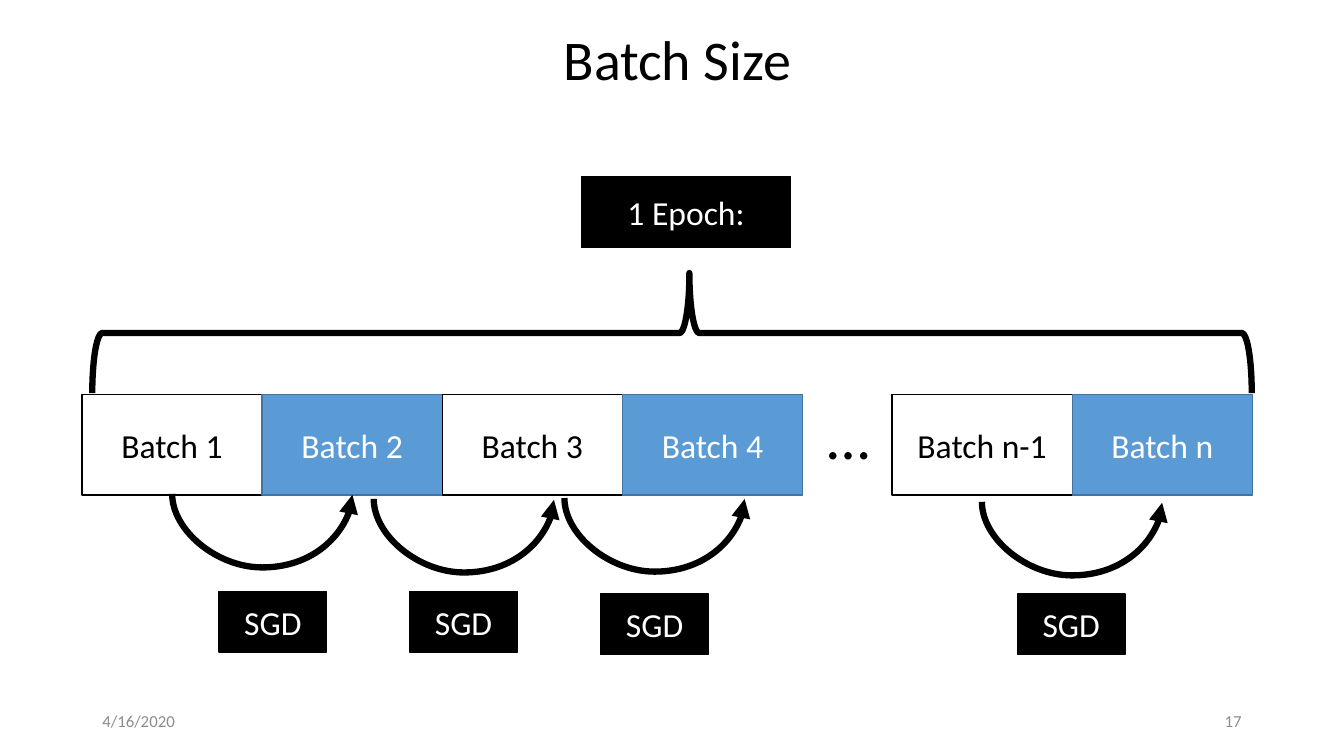
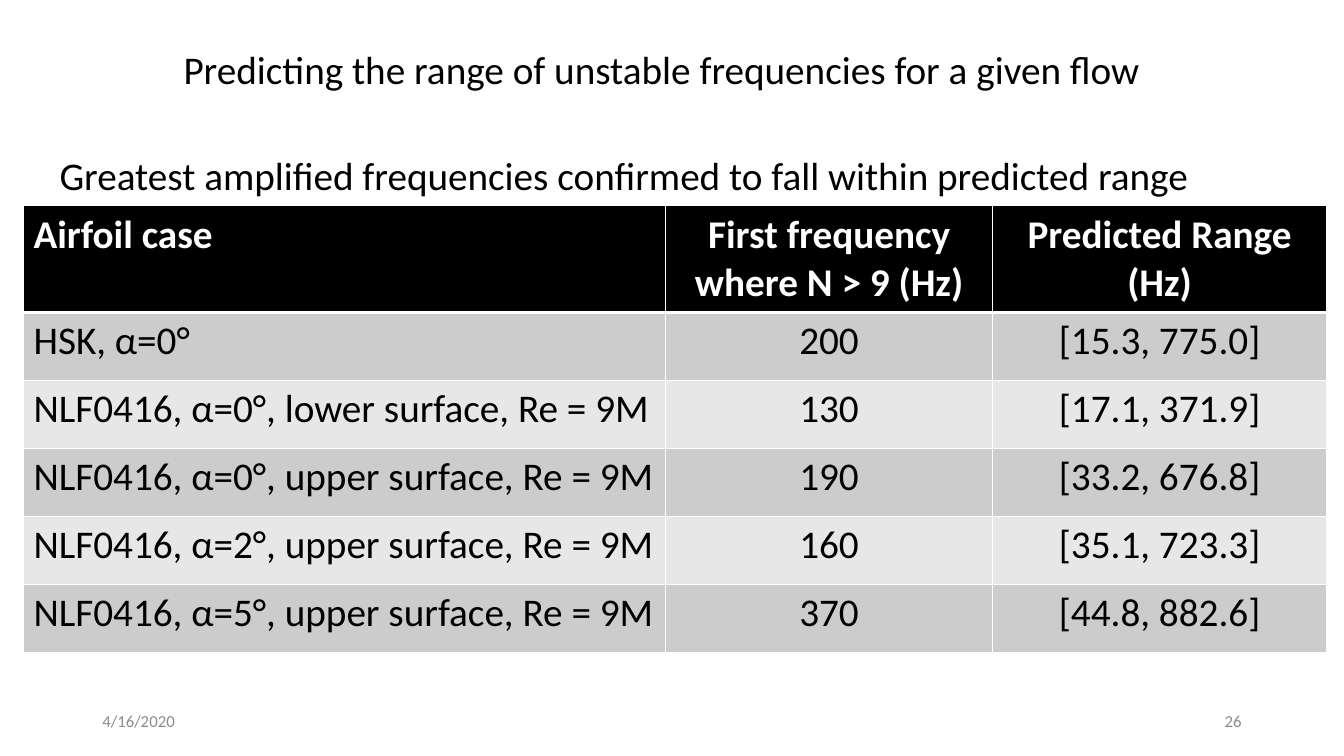
from lxml.etree import SubElement
from pptx import Presentation
from pptx.dml.color import RGBColor
from pptx.enum.shapes import MSO_CONNECTOR, MSO_SHAPE
from pptx.enum.text import MSO_ANCHOR, MSO_AUTO_SIZE, PP_ALIGN
from pptx.oxml.ns import qn
from pptx.util import Inches, Pt

COLS, ROWS = 160, 90
BLACK, WHITE, GRAY = "000000", "FFFFFF", "8C8C8C"
BLUE, DARK_BLUE = "5B9BD5", "43739E"
BANDS = ("CCCCCC", "E7E7E7")
LEFT, CENTER, RIGHT = PP_ALIGN.LEFT, PP_ALIGN.CENTER, PP_ALIGN.RIGHT
TOP, MIDDLE = MSO_ANCHOR.TOP, MSO_ANCHOR.MIDDLE


def rgb(value):
    return RGBColor.from_string(value)


class Deck:
    """Holds the shared style and the slide being built; lengths are grid units."""
    font = "Calibri"
    date = "4/16/2020"

    def __init__(self):
        self.prs = Presentation()
        self.prs.slide_width, self.prs.slide_height = Inches(13.33), Inches(7.5)
        self.s = None

    def x(self, cols):
        return int(self.prs.slide_width * cols / COLS)

    def y(self, rows):
        return int(self.prs.slide_height * rows / ROWS)

    def box(self, left, top, width, height):
        return self.x(left), self.y(top), self.x(width), self.y(height)

    def set_text(self, tf, text, size, color=BLACK, align=LEFT, anchor=TOP, bold=False):
        tf.word_wrap = True
        tf.vertical_anchor = anchor
        p = tf.paragraphs[0]
        p.alignment = align
        r = p.add_run()
        r.text = text
        r.font.name, r.font.size, r.font.bold = self.font, Pt(size), bold
        r.font.color.rgb = rgb(color)

    def slide(self, title, area, size, number):
        self.s = self.prs.slides.add_slide(self.prs.slide_layouts[5])
        sp = self.s.shapes.title
        sp.left, sp.top, sp.width, sp.height = self.box(*area)
        sp.text_frame.auto_size = MSO_AUTO_SIZE.NONE
        self.set_text(sp.text_frame, title, size)
        for left, text, align in ((11, self.date, LEFT), (113, number, RIGHT)):
            self.text(text, (left, 83.4, 36, 4.8), 12, GRAY, align, MIDDLE)

    def text(self, text, area, size, color=BLACK, align=LEFT, anchor=TOP):
        sp = self.s.shapes.add_textbox(*self.box(*area))
        self.set_text(sp.text_frame, text, size, color, align, anchor)

    def rect(self, text, area, fill=BLACK, line=BLACK, color=WHITE):
        sp = self.s.shapes.add_shape(MSO_SHAPE.RECTANGLE, *self.box(*area))
        sp.shadow.inherit = False
        sp.fill.solid()
        sp.fill.fore_color.rgb = rgb(fill)
        sp.line.color.rgb, sp.line.width = rgb(line), Pt(1)
        self.set_text(sp.text_frame, text, 24, color, CENTER, MIDDLE)

    def brace(self, left, top, width, height, tip):
        """Brace over the given area; tip is its point's share from the right."""
        mid_x, mid_y = left + width / 2, top + height / 2
        area = self.box(mid_x - height / 2, mid_y - width / 2, height, width)
        sp = self.s.shapes.add_shape(MSO_SHAPE.LEFT_BRACE, *area)
        sp.rotation = 90
        sp.adjustments[0], sp.adjustments[1] = 0.083, tip
        sp.shadow.inherit = False
        sp.fill.background()
        sp.line.color.rgb, sp.line.width = rgb(BLACK), Pt(4.5)

    def arc_arrow(self, left, top, span, depth, rise=0.12):
        """U-shaped arrow from left to right, drawn as a turned curved connector."""
        mid_x = left + span / 2
        c = self.s.shapes.add_connector(
            MSO_CONNECTOR.CURVE,
            self.x(mid_x + rise / 2), self.y(top - span / 2),
            self.x(mid_x - rise / 2), self.y(top + span / 2))
        c.line.color.rgb, c.line.width = rgb(BLACK), Pt(4.5)
        props = c._element.spPr
        props.find(qn("a:xfrm")).set("rot", str(270 * 60000))
        geometry = props.find(qn("a:prstGeom"))
        guides = geometry.find(qn("a:avLst"))
        if guides is None:
            guides = SubElement(geometry, qn("a:avLst"))
        SubElement(guides, qn("a:gd"), name="adj1",
                   fmla=f"val {round(depth / rise * 100000)}")
        SubElement(props.find(qn("a:ln")), qn("a:tailEnd"), type="triangle")
        SubElement(props, qn("a:effectLst"))

    def borders(self, cell, bottom):
        tc_pr = cell._tc.get_or_add_tcPr()
        for side, width in (("L", 1), ("R", 1), ("T", 1), ("B", bottom)):
            ln = SubElement(tc_pr, qn(f"a:ln{side}"), w=str(Pt(width)))
            fill = SubElement(ln, qn("a:solidFill"))
            SubElement(fill, qn("a:srgbClr"), val=WHITE)

    def table(self, left, top, widths, heights, rows):
        area = self.box(left, top, sum(widths), sum(heights))
        table = self.s.shapes.add_table(len(rows), len(widths), *area).table
        table.horz_banding = False
        for column, width in zip(table.columns, widths):
            column.width = self.x(width)
        for i, (row, height, values) in enumerate(zip(table.rows, heights, rows)):
            row.height = self.y(height)
            header = i == 0
            for j, (cell, value) in enumerate(zip(row.cells, values)):
                self.borders(cell, 3 if header else 1)
                cell.fill.solid()
                cell.fill.fore_color.rgb = rgb(BLACK if header else BANDS[(i - 1) % 2])
                self.set_text(cell.text_frame, value, 28, WHITE if header else BLACK,
                              CENTER if j else LEFT, bold=header)


def batch_size(deck):
    deck.slide("Batch Size", (65.9, 2.3, 31.45, 9.5), 40, "17")
    deck.rect("1 Epoch:", (69.25, 21, 24.85, 8.5))

    width = 21.45
    groups = ((9.75, ("Batch 1", "Batch 2", "Batch 3", "Batch 4")),
              (106.2, ("Batch n-1", "Batch n")))
    for left, names in groups:
        for i, name in enumerate(names):
            style = (BLUE, DARK_BLUE, WHITE) if i % 2 else (WHITE, BLACK, BLACK)
            deck.rect(name, (left + i * width, 46.95, width, 12), *style)
    deck.text("…", (97.3, 46.8, 8.8, 10), 44)
    deck.brace(11, 32.5, 138, 14.3, 0.485)

    steps = ((20.5, 58.85, 26.05, 70.45), (44.5, 59.45, 48.75, 70.45),
             (67.2, 59.35, 71.5, 70.7), (116.9, 59.8, 121.1, 70.7))
    for arc_left, arc_top, label_left, label_top in steps:
        deck.arc_arrow(arc_left, arc_top, width, 8.9)
        deck.rect("SGD", (label_left, label_top, 12.85, 7.2))


def frequency_range(deck):
    deck.slide("Predicting the range of unstable frequencies for a given flow",
               (20.65, 4.8, 139, 6.85), 28, "26")
    deck.text("Greatest amplified frequencies confirmed to fall within predicted range",
              (5.9, 17.4, 154, 6.85), 28)
    rows = (
        ("Airfoil case", "First frequency where N > 9 (Hz)", "Predicted Range (Hz)"),
        ("HSK, α=0°", "200", "[15.3, 775.0]"),
        ("NLF0416, α=0°, lower surface, Re = 9M", "130", "[17.1, 371.9]"),
        ("NLF0416, α=0°, upper surface, Re = 9M", "190", "[33.2, 676.8]"),
        ("NLF0416, α=2°, upper surface, Re = 9M", "160", "[35.1, 723.3]"),
        ("NLF0416, α=5°, upper surface, Re = 9M", "370", "[44.8, 882.6]"),
    )
    deck.table(2.8, 24.5, (76.4, 39, 39.7), (12.7,) + (8.1,) * 5, rows)


def main():
    deck = Deck()
    batch_size(deck)
    frequency_range(deck)
    deck.prs.save("out.pptx")


if __name__ == "__main__":
    main()
